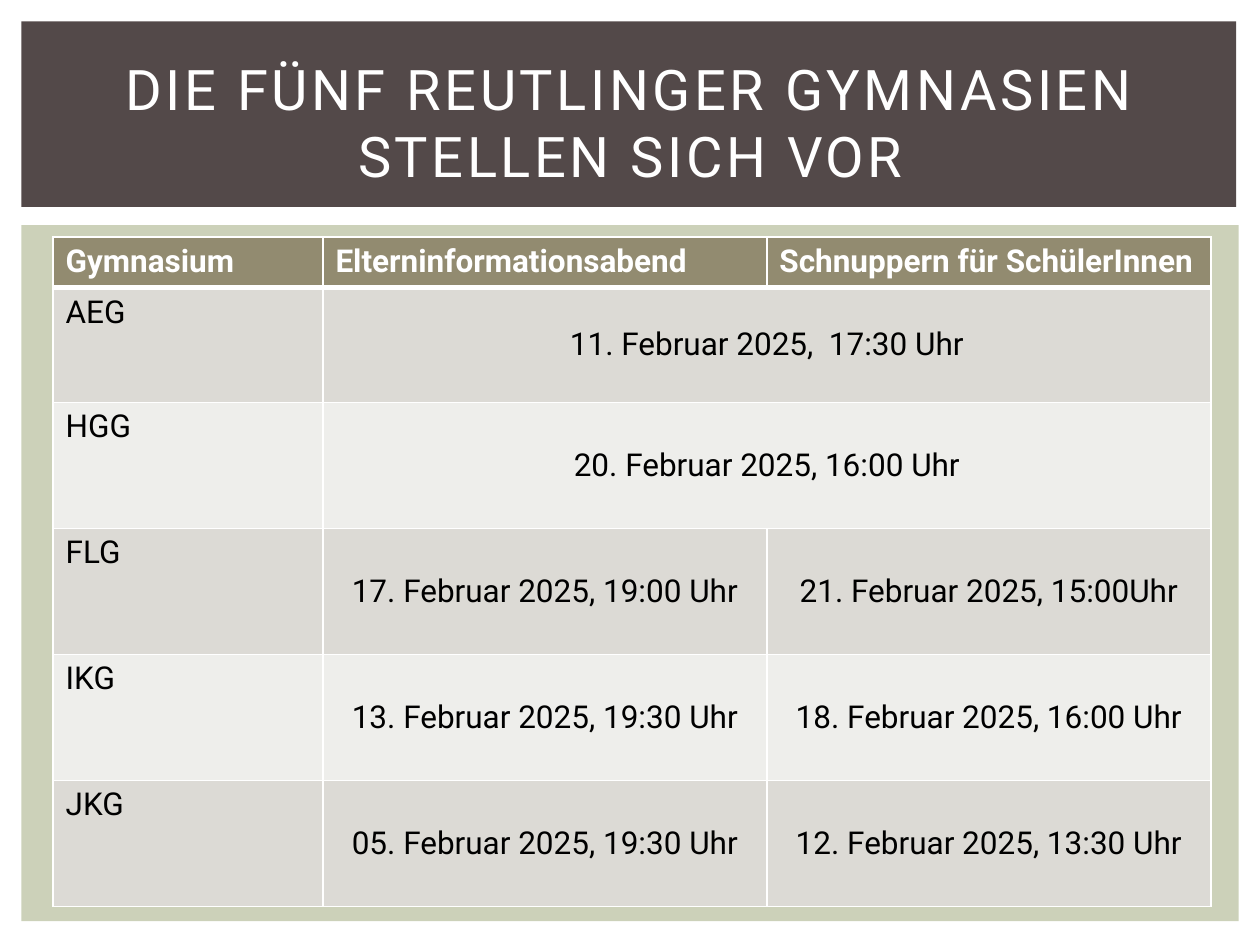
from lxml.etree import SubElement
from pptx import Presentation
from pptx.dml.color import RGBColor
from pptx.enum.shapes import MSO_SHAPE as SHAPE
from pptx.enum.text import MSO_ANCHOR as ANCHOR, MSO_AUTO_SIZE as AUTO, PP_ALIGN as ALIGN
from pptx.oxml.ns import qn
from pptx.util import Cm, Pt

COLORS = {
    "white": "FFFFFF",
    "black": "000000",
    "banner": "534949",
    "panel": "CCD1B9",
    "header": "928B70",
    "odd": "DCDAD5",
    "even": "EEEEEB",
}
FONT = "Roboto"
HEADERS = ["Gymnasium", "Elterninformationsabend", "Schnuppern für SchülerInnen"]
SCHOOLS = [
    ["AEG", "11. Februar 2025,  17:30 Uhr"],
    ["HGG", "20. Februar 2025, 16:00 Uhr"],
    ["FLG", "17. Februar 2025, 19:00 Uhr", "21. Februar 2025, 15:00Uhr"],
    ["IKG", "13. Februar 2025, 19:30 Uhr", "18. Februar 2025, 16:00 Uhr"],
    ["JKG", "05. Februar 2025, 19:30 Uhr", "12. Februar 2025, 13:30 Uhr"],
]
COL_WIDTHS = [5.44, 8.95, 8.95]
ROW_HEIGHTS = [1.02, 2.31] + [2.54] * 4


def rgb(name):
    return RGBColor.from_string(COLORS[name])


def write(tf, text, size=18, color="black", bold=False, align=ALIGN.LEFT, spacing=0):
    p = tf.paragraphs[0]
    p.alignment = align
    r = p.add_run()
    r.text = text
    r.font.name = FONT
    r.font.size = Pt(size)
    r.font.bold = bold
    r.font.color.rgb = rgb(color)
    if spacing:
        r.font._element.set("spc", str(spacing * 100))


def add_block(s, x, y, w, h, color):
    sp = s.shapes.add_shape(SHAPE.RECTANGLE, Cm(x), Cm(y), Cm(w), Cm(h))
    sp.shadow.inherit = False
    sp.fill.solid()
    sp.fill.fore_color.rgb = rgb(color)
    sp.line.fill.background()


def add_banner(s, x, y, w, h):
    add_block(s, x, y, w, h, "banner")
    title = s.shapes.title
    title.left, title.top = Cm(x + 0.64), Cm(y + 0.56)
    title.width, title.height = Cm(w - 1.2), Cm(h - 0.81)
    tf = title.text_frame
    tf.word_wrap = True
    tf.auto_size = AUTO.NONE
    tf.vertical_anchor = ANCHOR.MIDDLE
    write(tf, "DIE FÜNF REUTLINGER GYMNASIEN STELLEN SICH VOR",
          size=32, color="white", align=ALIGN.CENTER, spacing=2)
    title.element.getparent().append(title.element)


def style_cell(cell, color, bottom=1):
    tcPr = cell._tc.get_or_add_tcPr()
    for side, width in zip("LRTB", (1, 1, 1, bottom)):
        ln = SubElement(tcPr, qn(f"a:ln{side}"), w=str(Pt(width)))
        fill = SubElement(ln, qn("a:solidFill"))
        SubElement(fill, qn("a:srgbClr"), val=COLORS["white"])
    cell.fill.solid()
    cell.fill.fore_color.rgb = rgb(color)


def add_schedule(s, x, y, w, h):
    add_block(s, x, y, w, h, "panel")
    table = s.shapes.add_table(
        len(ROW_HEIGHTS), len(COL_WIDTHS), Cm(x + 0.64), Cm(y + 0.24),
        Cm(sum(COL_WIDTHS)), Cm(sum(ROW_HEIGHTS))).table
    for col, width in zip(table.columns, COL_WIDTHS):
        col.width = Cm(width)
    for row, height in zip(table.rows, ROW_HEIGHTS):
        row.height = Cm(height)

    for cell, text in zip(table.rows[0].cells, HEADERS):
        style_cell(cell, "header", bottom=3)
        write(cell.text_frame, text, color="white", bold=True)

    for i, school in enumerate(SCHOOLS, 1):
        for cell in table.rows[i].cells:
            style_cell(cell, "odd" if i % 2 else "even")
        if len(school) == 2:
            table.cell(i, 1).merge(table.cell(i, 2))
        write(table.cell(i, 0).text_frame, school[0])
        for j, date in enumerate(school[1:], 1):
            cell = table.cell(i, j)
            cell.vertical_anchor = ANCHOR.MIDDLE
            write(cell.text_frame, date, align=ALIGN.CENTER)


def main():
    prs = Presentation()
    prs.slide_width, prs.slide_height = Cm(25.4), Cm(19.05)
    s = prs.slides.add_slide(prs.slide_layouts.get_by_name("Title Only"))
    add_schedule(s, 0.43, 4.54, 24.54, 14.03)
    add_banner(s, 0.43, 0.43, 24.49, 3.74)
    prs.save("out.pptx")


if __name__ == "__main__":
    main()
